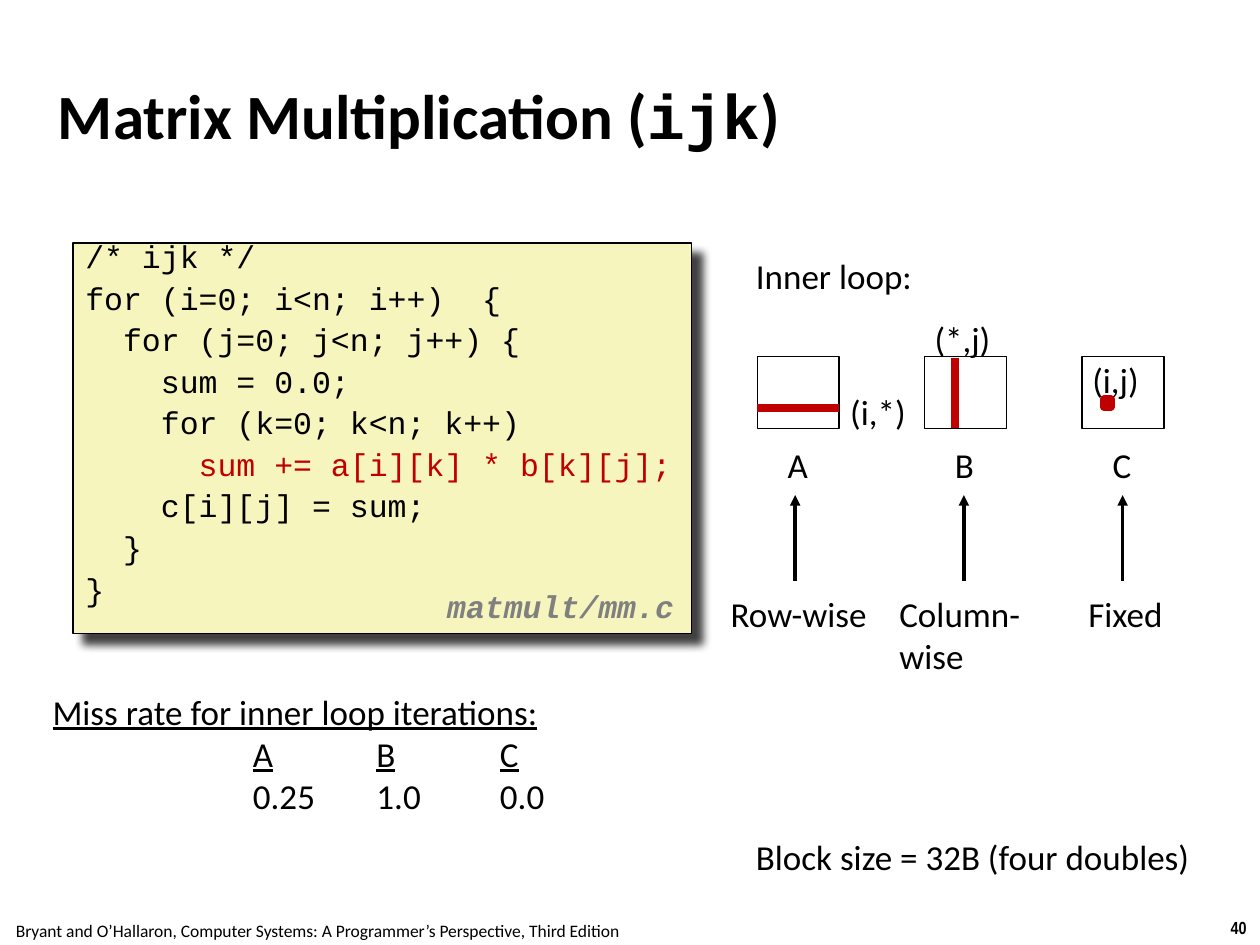
from dataclasses import dataclass
from typing import Optional

from lxml import etree
from pptx import Presentation
from pptx.dml.color import RGBColor
from pptx.enum import shapes, text
from pptx.oxml.ns import qn
from pptx.util import Cm, Pt

LEFT, CENTER = text.PP_ALIGN.LEFT, text.PP_ALIGN.CENTER


@dataclass(frozen=True)
class Theme:
    black: str = "000000"
    white: str = "FFFFFF"
    red: str = "C00000"
    dot: str = "FF0000"
    grey: str = "808080"
    cream: str = "F6F5BD"
    body: str = "Calibri"
    code: str = "Courier New"
    narrow: str = "Arial Narrow"
    title_size: int = 36
    body_size: int = 20
    code_size: int = 18
    footer_size: int = 10


THEME = Theme()


@dataclass(frozen=True)
class Run:
    text: str
    size: int = THEME.body_size
    font: str = THEME.body
    color: str = THEME.black
    bold: bool = False
    italic: bool = False
    underline: bool = False


@dataclass(frozen=True)
class Box:
    """A rectangle in centimetres."""
    left: float
    top: float
    width: float
    height: float

    def emu(self) -> list:
        return [Cm(n) for n in (self.left, self.top, self.width, self.height)]


@dataclass(frozen=True)
class Matrix:
    name: str
    left: float
    arrow_x: float
    access: tuple
    access_left: float
    access_width: float


MATRICES = [
    Matrix("A", 15.27, 16.03, ("Row-wise",), 14.48, 3.28),
    Matrix("B", 18.64, 19.43, ("Column-", "wise"), 17.88, 2.97),
    Matrix("C", 21.82, 22.63, ("Fixed",), 21.69, 2.0),
]
MATRIX_TOP, MATRIX_WIDTH, MATRIX_HEIGHT = 7.19, 1.65, 1.45
LABEL_HEIGHT = 1.09

CODE = [
    "/* ijk */",
    "for (i=0; i<n; i++)  {",
    "  for (j=0; j<n; j++) {",
    "    sum = 0.0;",
    "    for (k=0; k<n; k++)",
    "      sum += a[i][k] * b[k][j];",
    "    c[i][j] = sum;",
    "  }",
    "}",
]
INNERMOST = "sum +="
MISS_RATES = {"A": "0.25", "B": "1.0", "C": "0.0"}
FIRST_TAB, TAB_STEP = 4.04, 2.49


def write(frame, paragraphs: list, align=LEFT) -> None:
    """Fill a text frame with paragraphs, each a list of Run."""
    for index, runs in enumerate(paragraphs):
        paragraph = frame.add_paragraph() if index else frame.paragraphs[0]
        paragraph.alignment = align
        for item in runs:
            run = paragraph.add_run()
            run.text = item.text
            font = run.font
            font.size, font.name = Pt(item.size), item.font
            font.bold, font.italic, font.underline = item.bold, item.italic, item.underline
            font.color.rgb = RGBColor.from_string(item.color)


def add_text(slide, box: Box, paragraphs: list, align=LEFT, wrap: bool = False):
    frame = slide.shapes.add_textbox(*box.emu()).text_frame
    frame.word_wrap = wrap
    write(frame, paragraphs, align)
    return frame


def add_label(slide, left: float, top: float, width: float, *lines: str) -> None:
    box = Box(left, top, width, LABEL_HEIGHT * len(lines))
    add_text(slide, box, [[Run(line)] for line in lines])


def add_rect(slide, box: Box, fill: str, line: str = THEME.black, weight: float = 1):
    rect = slide.shapes.add_shape(shapes.MSO_SHAPE.RECTANGLE, *box.emu())
    rect.shadow.inherit = False
    rect.fill.solid()
    rect.fill.fore_color.rgb = RGBColor.from_string(fill)
    rect.line.color.rgb = RGBColor.from_string(line)
    rect.line.width = Pt(weight)
    return rect


def add_line(slide, start: tuple, end: tuple, color: str, weight: float,
             head: Optional[str] = None) -> None:
    line = slide.shapes.add_connector(
        shapes.MSO_CONNECTOR.STRAIGHT, *[Cm(n) for n in start + end])
    line.line.color.rgb = RGBColor.from_string(color)
    line.line.width = Pt(weight)
    properties = line._element.spPr
    if head:
        etree.SubElement(properties.find(qn("a:ln")), qn("a:tailEnd"), type=head)
    etree.SubElement(properties, qn("a:effectLst"))


def add_drop_shadow(shape) -> None:
    effects = shape._element.spPr.find(qn("a:effectLst"))
    shadow = etree.SubElement(effects, qn("a:outerShdw"), blurRad=str(Pt(5)),
                              dist=str(Pt(8.5)), dir=str(45 * 60000),
                              algn="tl", rotWithShape="0")
    color = etree.SubElement(shadow, qn("a:srgbClr"), val=THEME.black)
    etree.SubElement(color, qn("a:alpha"), val="75000")


def add_code(slide) -> None:
    listing = add_rect(slide, Box(1.47, 4.9, 12.47, 7.87), THEME.cream)
    add_drop_shadow(listing)
    frame = listing.text_frame
    frame.word_wrap = True
    frame.vertical_anchor = text.MSO_ANCHOR.TOP
    write(frame, [[Run(line, THEME.code_size, THEME.code,
                       THEME.red if INNERMOST in line else THEME.black)]
                  for line in CODE])
    for paragraph in frame.paragraphs:
        paragraph.line_spacing = 0.65
        paragraph.space_before = Pt(9.7)
    source = Run("matmult/mm.c", THEME.code_size, THEME.code, THEME.grey,
                 bold=True, italic=True)
    add_text(slide, Box(8.66, 11.71, 5.28, 0.99), [[source]], CENTER)


def add_matrix(slide, matrix: Matrix) -> None:
    """Draw a matrix with its name and an arrow from its access pattern."""
    add_rect(slide, Box(matrix.left, MATRIX_TOP, MATRIX_WIDTH, MATRIX_HEIGHT), THEME.white)
    add_label(slide, matrix.left + 0.36, 8.81, 0.92, matrix.name)
    add_line(slide, (matrix.arrow_x, 11.71), (matrix.arrow_x, 9.98),
             THEME.black, 2, "triangle")
    add_label(slide, matrix.access_left, 11.81, matrix.access_width, *matrix.access)


def add_inner_loop(slide) -> None:
    add_label(slide, 14.99, 5.0, 3.68, "Inner loop:")
    for matrix in MATRICES:
        add_matrix(slide, matrix)
    row_left = MATRICES[0].left
    add_line(slide, (row_left, 8.23), (row_left + MATRIX_WIDTH, 8.23), THEME.red, 4.5)
    add_line(slide, (19.25, MATRIX_TOP + 0.02), (19.25, MATRIX_TOP + MATRIX_HEIGHT - 0.02),
             THEME.red, 4.5)
    add_rect(slide, Box(22.25, 8.05, 0.15, 0.15), THEME.dot, THEME.red, 4.5)
    add_label(slide, 16.89, 7.75, 1.63, "(i,*)")
    add_label(slide, 18.59, 6.27, 1.65, "(*,j)")
    add_label(slide, 21.77, 7.11, 1.45, "(i,j)")


def add_miss_rates(slide) -> None:
    names, rates = [], []
    for name, rate in MISS_RATES.items():
        names += [Run("\t"), Run(name, underline=True)]
        rates += [Run("\t"), Run(rate)]
    heading = [Run("Miss rate for inner loop iterations:", underline=True)]
    frame = add_text(slide, Box(0.81, 13.79, 14.1, 3.38), [heading, names, rates], wrap=True)
    for paragraph in frame.paragraphs[1:]:
        stops = etree.SubElement(paragraph._p.get_or_add_pPr(), qn("a:tabLst"))
        for column in range(len(MISS_RATES)):
            etree.SubElement(stops, qn("a:tab"), algn="l",
                             pos=str(Cm(FIRST_TAB + column * TAB_STEP)))


def main() -> None:
    deck = Presentation()
    deck.slide_width, deck.slide_height = Cm(25.4), Cm(19.05)
    slide = deck.slides.add_slide(deck.slide_layouts[6])

    title = add_text(slide, Box(1.07, 0.71, 23.29, 3.18), [[
        Run("Matrix Multiplication (", THEME.title_size, bold=True),
        Run("ijk", THEME.title_size, THEME.code, bold=True),
        Run(")", THEME.title_size, bold=True)]], wrap=True)
    title.vertical_anchor = text.MSO_ANCHOR.MIDDLE
    title.margin_left = title.margin_right = Cm(0.1)

    add_code(slide)
    add_inner_loop(slide)
    add_miss_rates(slide)
    add_text(slide, Box(14.02, 16.71, 11.18, 1.12),
             [[Run("Block size = 32B (four doubles)")]], CENTER, wrap=True)
    add_text(slide, Box(-0.05, 18.42, 12.9, 0.69), [[Run(
        "Bryant and O’Hallaron, Computer Systems: A Programmer’s Perspective, Third Edition",
        THEME.footer_size)]], CENTER)
    add_text(slide, Box(24.54, 18.36, 0.86, 0.69),
             [[Run("40", THEME.footer_size, THEME.narrow, bold=True)]], CENTER)
    deck.save("out.pptx")


if __name__ == "__main__":
    main()
